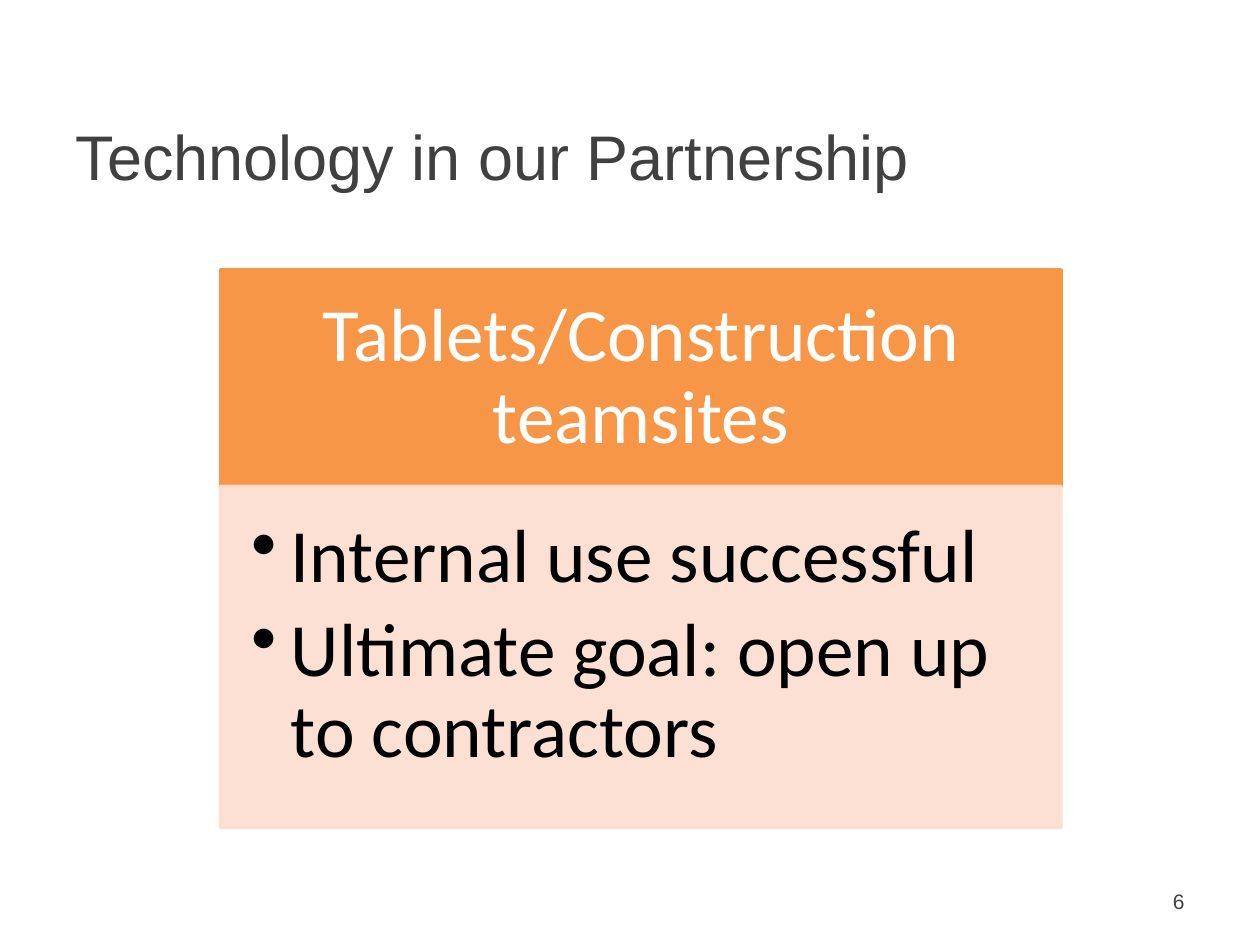
from lxml import etree
from pptx import Presentation
from pptx import util as u
from pptx.dml import color
from pptx.enum import shapes, text
from pptx.oxml import ns

COLORS = {"title": "404040", "header": "F79646", "body": "FCDDCF",
          "light": "FFFFFF", "dark": "000000"}


def rgb(name):
    return color.RGBColor.from_string(COLORS[name])


def style_font(paragraph, name, size, shade):
    paragraph.font.name = name
    paragraph.font.size = u.Pt(size)
    paragraph.font.color.rgb = rgb(shade)


def set_insets(frame, left, top, right, bottom):
    frame.margin_left, frame.margin_top = u.Inches(left), u.Inches(top)
    frame.margin_right, frame.margin_bottom = u.Inches(right), u.Inches(bottom)


def add_bullet(paragraph, indent):
    properties = paragraph._p.get_or_add_pPr()
    properties.set("marL", str(u.Inches(indent)))
    properties.set("indent", str(-u.Inches(indent)))
    etree.SubElement(properties, ns.qn("a:buChar")).set("char", "•")


def set_alpha(shape, percent):
    for element in shape._element.spPr.iter(ns.qn("a:srgbClr")):
        etree.SubElement(element, ns.qn("a:alpha")).set("val", str(percent * 1000))


def add_panel(slide, box, shade):
    panel = slide.shapes.add_shape(shapes.MSO_SHAPE.RECTANGLE, *map(u.Inches, box))
    panel.shadow.inherit = False
    panel.fill.solid()
    panel.fill.fore_color.rgb = rgb(shade)
    panel.line.color.rgb = rgb(shade)
    panel.line.width = u.Pt(2)
    panel.text_frame.word_wrap = True
    return panel


def place_title(slide, box, wording):
    title = slide.shapes.title
    title.left, title.top, title.width, title.height = map(u.Inches, box)
    title.text_frame.text = wording
    title.text_frame.vertical_anchor = text.MSO_ANCHOR.MIDDLE
    paragraph = title.text_frame.paragraphs[0]
    paragraph.alignment = text.PP_ALIGN.LEFT
    style_font(paragraph, "Arial", 36, "title")


def add_topic(slide, box, heading, points, header_height):
    left, top, width, height = box
    header = add_panel(slide, (left, top, width, header_height), "header")
    frame = header.text_frame
    set_insets(frame, 0.33, 0.19, 0.33, 0.19)
    frame.vertical_anchor = text.MSO_ANCHOR.MIDDLE
    frame.text = heading
    paragraph = frame.paragraphs[0]
    paragraph.alignment = text.PP_ALIGN.CENTER
    paragraph.line_spacing = 0.9
    style_font(paragraph, "Calibri", 43, "light")

    body = add_panel(slide, (left, top + header_height, width, height - header_height), "body")
    set_alpha(body, 90)
    frame = body.text_frame
    set_insets(frame, 0.25, 0.25, 0.33, 0.38)
    frame.vertical_anchor = text.MSO_ANCHOR.TOP
    frame.text = "\n".join(points)
    for paragraph in frame.paragraphs:
        paragraph.level = 1
        paragraph.alignment = text.PP_ALIGN.LEFT
        paragraph.line_spacing = 0.9
        paragraph.space_after = u.Pt(7)
        add_bullet(paragraph, 0.31)
        style_font(paragraph, "Calibri", 43, "dark")


def add_page_number(slide, box, number):
    frame = slide.shapes.add_textbox(*map(u.Inches, box)).text_frame
    frame.word_wrap = True
    frame.vertical_anchor = text.MSO_ANCHOR.MIDDLE
    frame.text = str(number)
    paragraph = frame.paragraphs[0]
    paragraph.alignment = text.PP_ALIGN.RIGHT
    style_font(paragraph, "Arial", 12, "title")


def main():
    presentation = Presentation()
    presentation.slide_width, presentation.slide_height = u.Inches(10), u.Inches(7.5)
    slide = presentation.slides.add_slide(presentation.slide_layouts.get_by_name("Title Only"))
    place_title(slide, (0.5, 0.61, 9, 1.25), "Technology in our Partnership")
    add_page_number(slide, (7.17, 6.95, 2.33, 0.4), 6)
    add_topic(slide, (1.75, 2.14, 6.67, 4.43), "Tablets/Construction teamsites",
              ["Internal use successful", "Ultimate goal: open up to contractors"], 1.72)
    presentation.save("out.pptx")


if __name__ == "__main__":
    main()
